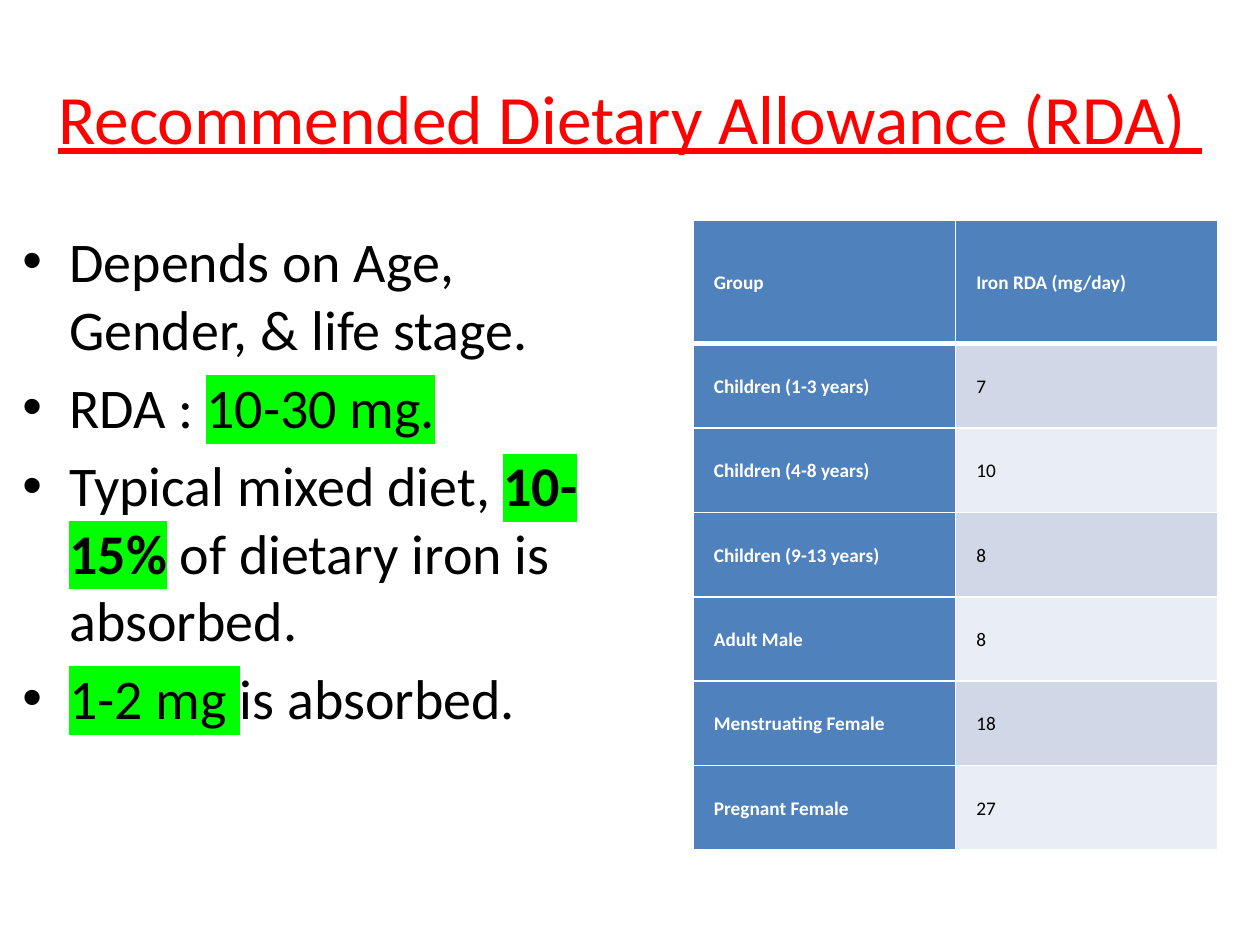
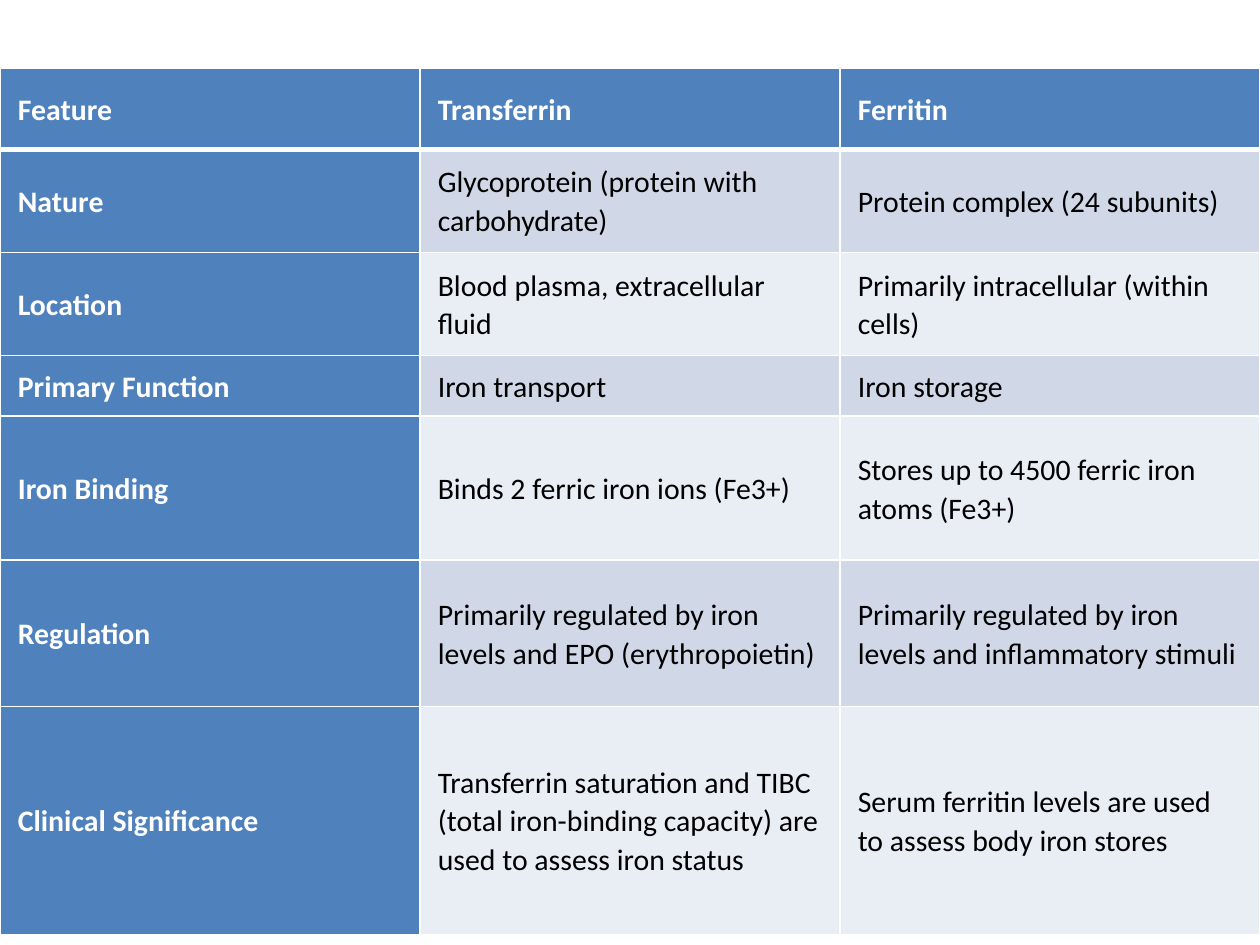
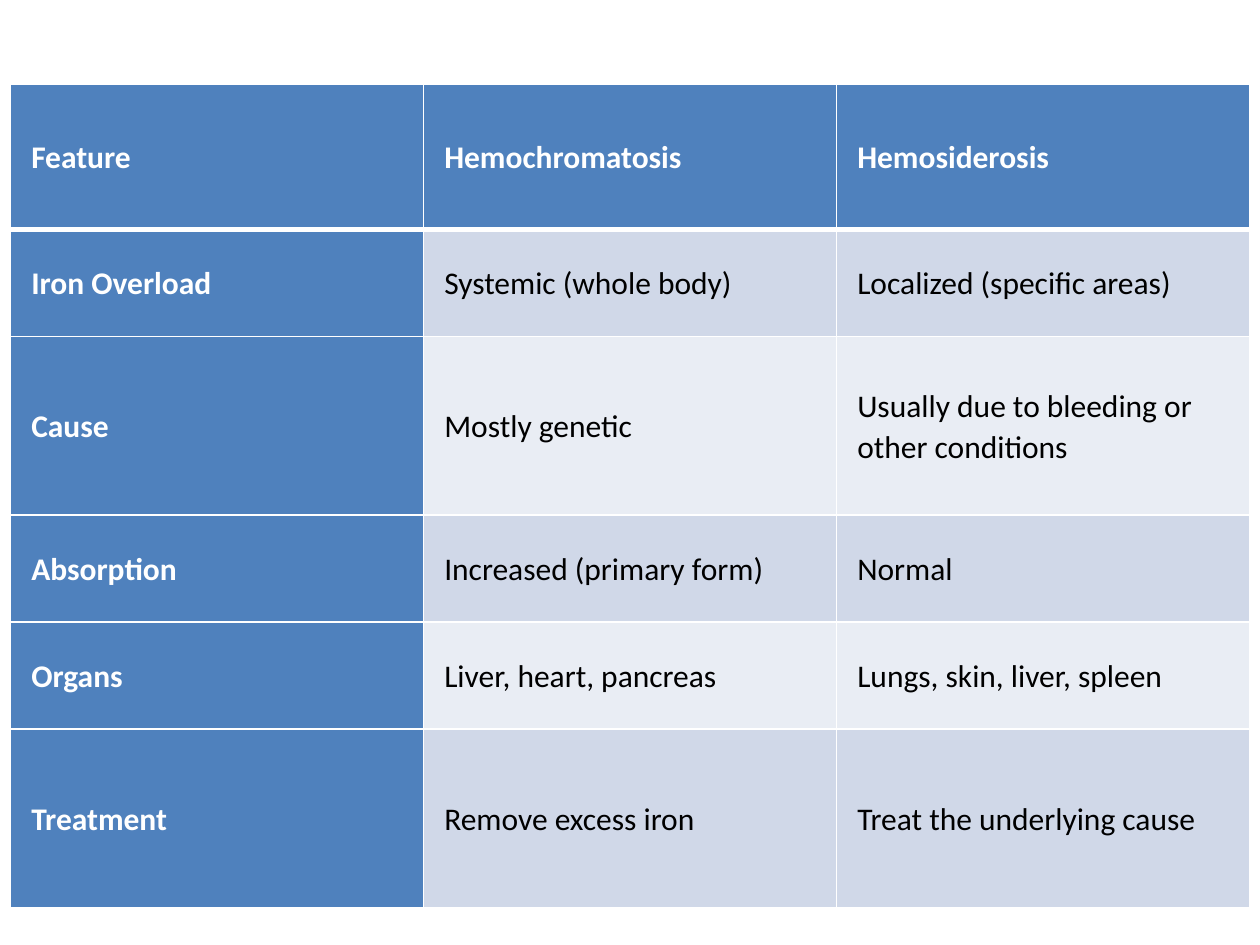
import pptx
import pptx.util
import pptx.dml.color
import pptx.enum.text
import lxml.etree
from pptx.oxml.ns import qn
from pptx.util import Cm, Pt

RGBColor = pptx.dml.color.RGBColor
MIDDLE = pptx.enum.text.MSO_ANCHOR.MIDDLE
CENTER = pptx.enum.text.PP_ALIGN.CENTER

# Shared style
FONT = "Calibri"
RED = RGBColor(0xFF, 0x00, 0x00)
BLACK = RGBColor(0x00, 0x00, 0x00)
WHITE = RGBColor(0xFF, 0xFF, 0xFF)
GREEN = RGBColor(0x00, 0xFF, 0x00)
BLUE = RGBColor(0x4F, 0x81, 0xBD)
DARK = RGBColor(0xD0, 0xD8, 0xE8)
LIGHT = RGBColor(0xE9, 0xED, 0xF4)


def style(run, size, color, bold=False):
    run.font.name = FONT
    run.font.size = Pt(size)
    run.font.color.rgb = color
    run.font.bold = bold


def grid(slide, left, top, width, heights, pad, size, rows):
    count = len(rows[0])
    frame = slide.shapes.add_table(len(rows), count, Cm(left), Cm(top),
                                   Cm(width), Cm(sum(heights)))
    table = frame.table
    table.horz_banding = False
    for col in table.columns:
        col.width = Cm(width / count)
    for r, (height, texts) in enumerate(zip(heights, rows)):
        table.rows[r].height = Cm(height)
        for c, text in enumerate(texts):
            cell = table.cell(r, c)
            head = r == 0 or c == 0
            # White borders, with a thick line under the header row
            props = cell._tc.get_or_add_tcPr()
            for side in "LRTB":
                thick = (r, side) in ((0, "B"), (1, "T"))
                line = lxml.etree.SubElement(props, qn("a:ln" + side),
                                             w=str(Pt(3 if thick else 1)))
                fill = lxml.etree.SubElement(line, qn("a:solidFill"))
                lxml.etree.SubElement(fill, qn("a:srgbClr"), val=str(WHITE))
            cell.fill.solid()
            cell.fill.fore_color.rgb = BLUE if head else DARK if r % 2 else LIGHT
            # Text
            cell.vertical_anchor = MIDDLE
            cell.margin_left = cell.margin_right = Cm(pad)
            cell.margin_top = cell.margin_bottom = Cm(pad if r == 0 else pad / 2)
            cell.text_frame.text = text
            para = cell.text_frame.paragraphs[0]
            para.line_spacing = 1.07
            para.space_after = Pt(8)
            style(para.runs[0], size, WHITE if head else BLACK, head)


deck = pptx.Presentation()
deck.slide_width = Cm(25.4)
deck.slide_height = Cm(19.05)
blank = deck.slide_layouts[6]

# Slide 1: title
slide = deck.slides.add_slide(blank)
title = slide.shapes.add_textbox(0, Cm(0.76), Cm(25.4), Cm(3.18)).text_frame
title.word_wrap = True
title.vertical_anchor = MIDDLE
title.text = "Recommended Dietary Allowance (RDA) "
para = title.paragraphs[0]
para.alignment = CENTER
style(para.runs[0], 39.6, RED)
para.runs[0].font.underline = True

# Slide 1: bullets, each part given as text, marked, bold
points = [
    [("Depends on Age, Gender, & life stage.", False, False)],
    [("RDA : ", False, False), ("10-30 mg.", True, False)],
    [("Typical mixed diet, ", False, False), ("10-15%", True, True),
     (" of dietary iron is absorbed.", False, False)],
    [("1-2 mg ", True, False), ("is absorbed.", False, False)],
]
body = slide.shapes.add_textbox(Cm(0.2), Cm(4.45), Cm(12.9), Cm(12.7)).text_frame
body.word_wrap = True
for i, parts in enumerate(points):
    para = body.add_paragraph() if i else body.paragraphs[0]
    para.space_before = Pt(6.4)
    props = para._p.get_or_add_pPr()
    props.set("marL", str(Cm(0.95)))
    props.set("indent", str(-Cm(0.95)))
    lxml.etree.SubElement(props, qn("a:buFont"), typeface="Arial")
    lxml.etree.SubElement(props, qn("a:buChar"), char="•")
    for text, marked, bold in parts:
        run = para.add_run()
        run.text = text
        style(run, 32, BLACK, bold)
        if marked:
            mark = lxml.etree.Element(qn("a:highlight"))
            lxml.etree.SubElement(mark, qn("a:srgbClr"), val=str(GREEN))
            run._r.rPr.find(qn("a:solidFill")).addnext(mark)

# Slide 1: iron needs by group
grid(slide, 13.97, 4.45, 10.58, [2.48] + [1.7] * 6, 0.42, 11, [
    ("Group", "Iron RDA (mg/day)"),
    ("Children (1-3 years)", "7"),
    ("Children (4-8 years)", "10"),
    ("Children (9-13 years)", "8"),
    ("Adult Male", "8"),
    ("Menstruating Female", "18"),
    ("Pregnant Female", "27"),
])

# Slide 2: transferrin and ferritin
slide = deck.slides.add_slide(blank)
grid(slide, 0, 1.38, 25.4, [1.63, 2.08, 2.08, 1.22, 2.9, 2.95, 4.6], 0.36, 17, [
    ("Feature", "Transferrin", "Ferritin"),
    ("Nature", "Glycoprotein (protein with carbohydrate)",
     "Protein complex (24 subunits)"),
    ("Location", "Blood plasma, extracellular fluid",
     "Primarily intracellular (within cells)"),
    ("Primary Function", "Iron transport", "Iron storage"),
    ("Iron Binding", "Binds 2 ferric iron ions (Fe3+)",
     "Stores up to 4500 ferric iron atoms (Fe3+)"),
    ("Regulation", "Primarily regulated by iron levels and EPO (erythropoietin)",
     "Primarily regulated by iron levels and inflammatory stimuli"),
    ("Clinical Significance",
     "Transferrin saturation and TIBC (total iron-binding capacity) "
     "are used to assess iron status",
     "Serum ferritin levels are used to assess body iron stores"),
])

# Slide 3: hemochromatosis and hemosiderosis
slide = deck.slides.add_slide(blank)
grid(slide, 0.21, 1.7, 24.98, [2.92, 2.16, 3.6, 2.16, 2.16, 3.6], 0.42, 18, [
    ("Feature", "Hemochromatosis", "Hemosiderosis"),
    ("Iron Overload", "Systemic (whole body)", "Localized (specific areas)"),
    ("Cause", "Mostly genetic", "Usually due to bleeding or other conditions"),
    ("Absorption", "Increased (primary form)", "Normal"),
    ("Organs", "Liver, heart, pancreas", "Lungs, skin, liver, spleen"),
    ("Treatment", "Remove excess iron", "Treat the underlying cause"),
])

deck.save("out.pptx")
